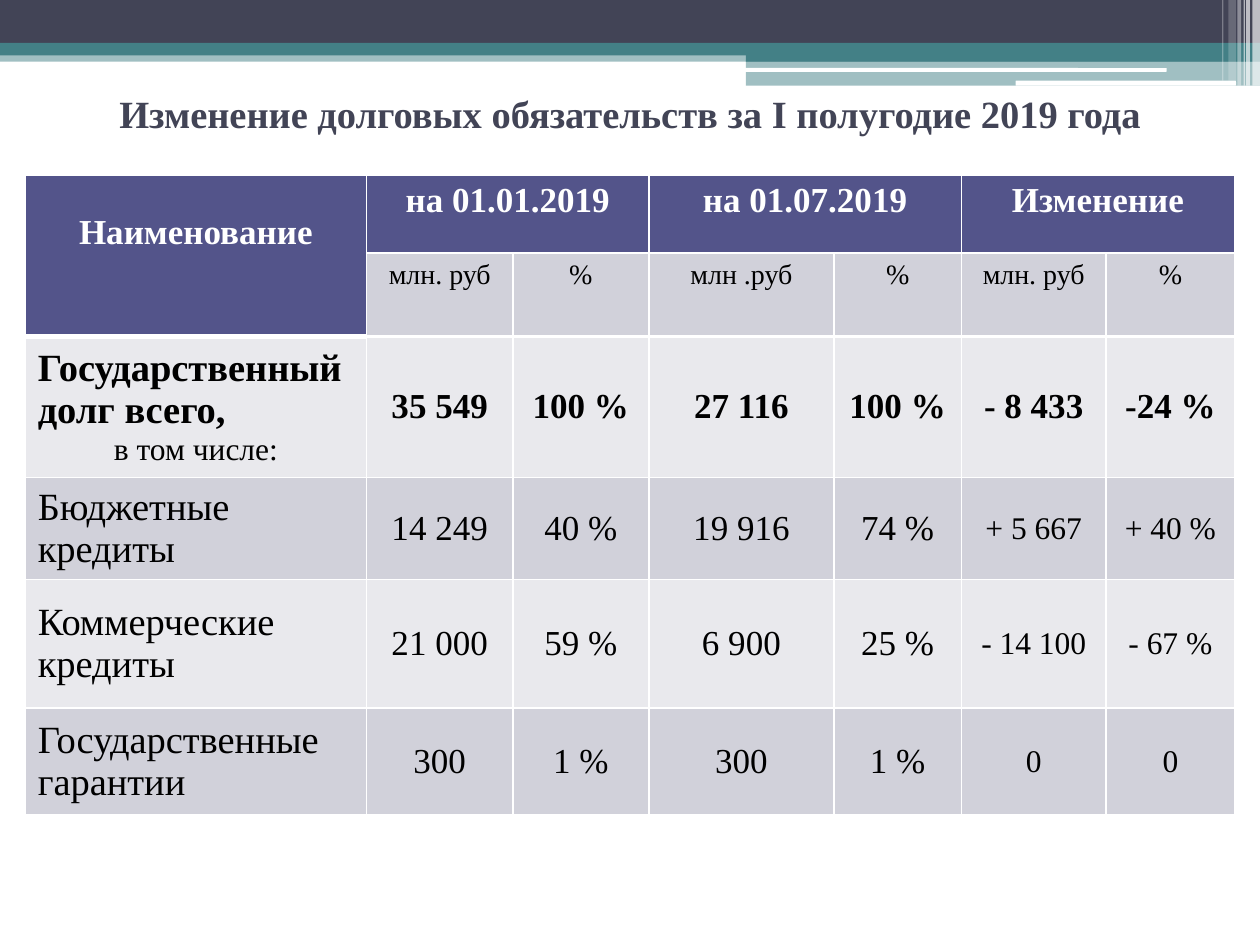
import pptx
import pptx.util
from lxml import etree
from pptx.dml.color import RGBColor
from pptx.enum.shapes import MSO_SHAPE
from pptx.enum.text import MSO_ANCHOR, PP_ALIGN
from pptx.oxml.ns import qn
from pptx.util import Inches, Pt

THEME = {
    "font": "Times New Roman",
    "dark": "424456", "teal": "438086", "white": "FFFFFF", "black": "000000",
    "header": "53548A", "band": "D1D1DA", "light": "E9E9ED",
    "title": 22, "label": 22, "value": 20, "change": 18, "unit": 16,
}

TITLE = "Изменение долговых обязательств за I полугодие 2019 года"
NAME = "Наименование"
GROUPS = ["на 01.01.2019", "на 01.07.2019", "Изменение"]
UNITS = ["млн. руб", "%", "млн .руб", "%", "млн. руб", "%"]
TOTAL = ["Государственный долг всего,", "35 549", "100 %", "27 116", "100 %", "- 8 433", "-24 %"]
TOTAL_NOTE = "в том числе:"
ITEMS = [
    ["Бюджетные кредиты", "14 249", "40 %", "19 916", "74 %", "+ 5 667", "+ 40 %"],
    ["Коммерческие кредиты", "21 000", "59 %", "6 900", "25 %", "- 14 100", "- 67 %"],
    ["Государственные гарантии", "300", "1 %", "300", "1 %", "0", "0"],
]
COLS = [2.71, 1.16, 1.08, 1.47, 1.01, 1.15, 1.02]
ROWS = [0.62, 0.66, 1.12, 0.81, 1.02, 0.85]
TABLE_LEFT, TABLE_TOP = 0.2, 1.39

# left, top, width, height, colour, opacity in percent
BANDS = [
    (0, 0.4, 10, 0.09, "teal", 50),
    (0, 0, 10, 0.34, "dark", 100),
    (0, 0.34, 10, 0.1, "teal", 100),
    (5.92, 0.39, 4.08, 0.1, "teal", 100),
    (5.92, 0.48, 4.08, 0.2, "teal", 50),
]
ROUNDED = [(5.91, 0.54, 3.35, 0.03), (8.06, 0.64, 1.75, 0.04)]
# left, width, height, opacity in percent
STRIPES = [
    (9.94, 0.06, 0.68, 65), (9.89, 0.03, 0.68, 65), (9.87, 0.01, 0.68, 60),
    (9.82, 0.03, 0.68, 40), (9.75, 0.06, 0.64, 20), (9.7, 0.01, 0.64, 30),
]


def color(name):
    return RGBColor.from_string(THEME[name])


def add_bar(s, kind, box, fill, opacity=100):
    sp = s.shapes.add_shape(kind, *map(Inches, box))
    sp.shadow.inherit = False
    sp.line.fill.background()
    sp.fill.solid()
    sp.fill.fore_color.rgb = color(fill)
    if opacity < 100:
        clr = sp.fill._xPr.find(".//" + qn("a:srgbClr"))
        etree.SubElement(clr, qn("a:alpha"), val=str(opacity * 1000))


def write(p, text, size, bold=False, ink="black", align=PP_ALIGN.CENTER):
    p.text = text
    p.alignment = align
    p.font.name, p.font.size, p.font.bold = THEME["font"], Pt(THEME[size]), bold
    p.font.color.rgb = color(ink)


def set_borders(cell, top, bottom):
    tcPr = cell._tc.get_or_add_tcPr()
    sides = [("a:lnL", 1), ("a:lnR", 1), ("a:lnT", top), ("a:lnB", bottom)]
    for i, (tag, width) in enumerate(sides):
        ln = etree.Element(qn(tag), w=str(Pt(width)))
        fill = etree.SubElement(ln, qn("a:solidFill"))
        etree.SubElement(fill, qn("a:srgbClr"), val=THEME["white"])
        tcPr.insert(i, ln)


def format_cells(table):
    for r in range(len(ROWS)):
        for c in range(len(COLS)):
            cell = table.cell(r, c)
            header = r == 0 or (r == 1 and c == 0)
            cell.fill.solid()
            cell.fill.fore_color.rgb = color("header" if header else "light" if r % 2 == 0 else "band")
            rule = 3 if c == 0 else 2.25
            under_header = r == 1 or (r == 0 and c == 0)
            set_borders(cell, rule if r == 2 else 1, rule if under_header else 1)
            cell.vertical_anchor = MSO_ANCHOR.MIDDLE if r > 1 else MSO_ANCHOR.TOP


def fill_table(table):
    name = table.cell(0, 0)
    name.merge(table.cell(1, 0))
    name.margin_top = Inches(0.3)
    write(name.text_frame.paragraphs[0], NAME, "value", True, "white")
    for i, group in enumerate(GROUPS):
        c = 1 + 2 * i
        table.cell(0, c).merge(table.cell(0, c + 1))
        write(table.cell(0, c).text_frame.paragraphs[0], group, "value", True, "white")
    for c, unit in enumerate(UNITS, 1):
        write(table.cell(1, c).text_frame.paragraphs[0], unit, "unit")
    for r, row in enumerate([TOTAL] + ITEMS, 2):
        total = row is TOTAL
        for c, text in enumerate(row):
            p = table.cell(r, c).text_frame.paragraphs[0]
            if c == 0:
                write(p, text, "label", total, align=PP_ALIGN.LEFT)
            else:
                write(p, text, "change" if c > 4 and not total else "value", total)
    write(table.cell(2, 0).text_frame.add_paragraph(), TOTAL_NOTE, "change")


def main():
    prs = pptx.Presentation()
    prs.slide_width, prs.slide_height = Inches(10), Inches(7.5)
    s = prs.slides.add_slide(prs.slide_layouts[5])

    for *box, fill, opacity in BANDS:
        add_bar(s, MSO_SHAPE.RECTANGLE, box, fill, opacity)
    for box in ROUNDED:
        add_bar(s, MSO_SHAPE.ROUNDED_RECTANGLE, box, "white")
    for left, width, height, opacity in STRIPES:
        add_bar(s, MSO_SHAPE.RECTANGLE, (left, 0, width, height), "white", opacity)

    title = s.shapes.title
    title.left, title.top, title.width, title.height = map(Inches, (0, 0.55, 10, 0.7))
    title.text_frame.vertical_anchor = MSO_ANCHOR.MIDDLE
    write(title.text_frame.paragraphs[0], TITLE, "title", True, "dark")
    s.shapes._spTree.append(title._element)

    box = map(Inches, (TABLE_LEFT, TABLE_TOP, sum(COLS), sum(ROWS)))
    table = s.shapes.add_table(len(ROWS), len(COLS), *box).table
    for col, width in zip(table.columns, COLS):
        col.width = Inches(width)
    for row, height in zip(table.rows, ROWS):
        row.height = Inches(height)
    format_cells(table)
    fill_table(table)
    prs.save("out.pptx")


if __name__ == "__main__":
    main()
